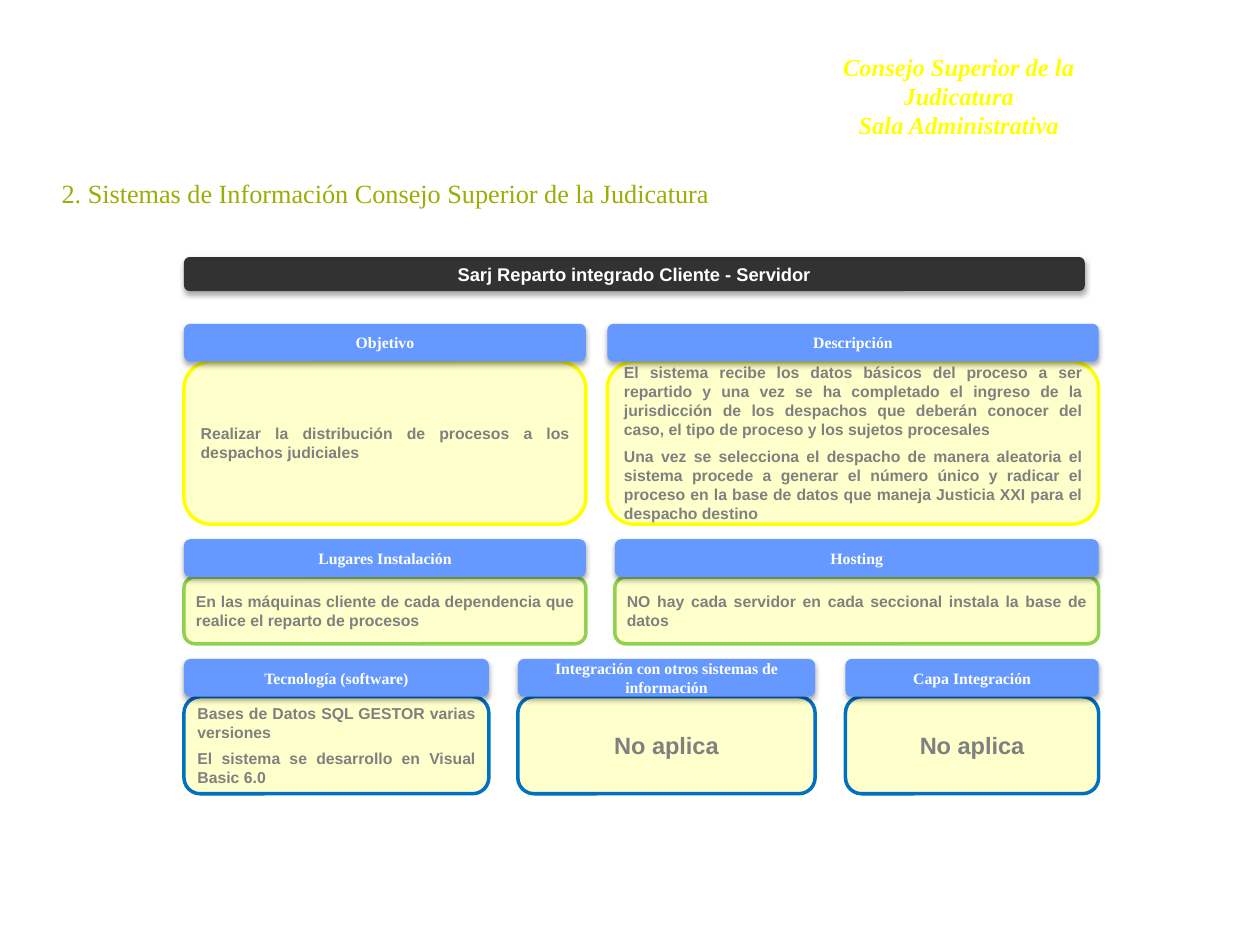
from lxml import etree
from pptx import Presentation
from pptx.dml.color import RGBColor
from pptx.enum.shapes import MSO_SHAPE
from pptx.enum.text import MSO_ANCHOR, PP_ALIGN
from pptx.oxml import parse_xml
from pptx.util import Inches, Pt

ROUNDED = MSO_SHAPE.ROUNDED_RECTANGLE
MIDDLE = MSO_ANCHOR.MIDDLE
CENTER = PP_ALIGN.CENTER
JUSTIFY = PP_ALIGN.JUSTIFY
SERIF, SANS = "Times New Roman", "Arial"
COLORS = {
    "yellow": "FFFF00", "olive": "9AAE04", "dark": "323232", "blue": "6699FF",
    "cream": "FFFFCC", "green": "92D050", "navy": "0070C0",
    "gray": "808080", "white": "FFFFFF",
}
SHADOW = (
    '<a:effectLst xmlns:a="http://schemas.openxmlformats.org/drawingml/2006/main">'
    '<a:outerShdw blurRad="39370" dist="22860" dir="5400000" rotWithShape="0">'
    '<a:srgbClr val="000000"><a:alpha val="35000"/></a:srgbClr>'
    "</a:outerShdw></a:effectLst>"
)

# Grid of the cards, in inches
LEFT, RIGHT = 1.46, 8.72
HEADER_HEIGHT = 0.3
HEADER_TEXT = {"name": SERIF, "size": Pt(9), "bold": True, "color": "white"}
BODY_TEXT = {"name": SANS, "size": Pt(9), "bold": True, "color": "gray"}
LARGE_TEXT = {**BODY_TEXT, "size": Pt(13.5)}

# Each row: top, body height, outline, cards (left, right, heading, body paragraphs)
ROWS = [
    (2.57, 1.29, "yellow", [
        (LEFT, 4.65, "Objetivo",
         ["Realizar la distribución de procesos a los despachos judiciales"]),
        (4.82, RIGHT, "Descripción",
         ["El sistema recibe los datos básicos del proceso a ser repartido y una vez "
          "se ha completado el ingreso de la jurisdicción de los despachos que deberán "
          "conocer del caso, el tipo de proceso y los sujetos procesales",
          "Una vez se selecciona el despacho de manera aleatoria el sistema procede a "
          "generar el número único y radicar el proceso en la base de datos que maneja "
          "Justicia XXI para el despacho destino"]),
    ]),
    (4.28, 0.53, "green", [
        (LEFT, 4.65, "Lugares Instalación",
         ["En las máquinas cliente de cada dependencia que realice el reparto de procesos"]),
        (4.88, RIGHT, "Hosting",
         ["NO hay cada servidor en cada seccional instala la base de datos"]),
    ]),
    (5.23, 0.77, "navy", [
        (LEFT, 3.88, "Tecnología (software)",
         ["Bases de Datos SQL GESTOR varias versiones",
          "El sistema se desarrollo en Visual Basic 6.0"]),
        (4.11, 6.47, "Integración con otros sistemas de información", ["No aplica"]),
        (6.71, RIGHT, "Capa Integración", ["No aplica"]),
    ]),
]


def write(box, lines, style, alignment=CENTER, gap=0, margins=(0.07, 0.04)):
    """Fill a box with paragraphs that share one character style."""
    frame = box.text_frame
    side, edge = map(Inches, margins)
    layout = {"word_wrap": True, "vertical_anchor": MIDDLE, "margin_left": side,
              "margin_right": side, "margin_top": edge, "margin_bottom": edge}
    for name, value in layout.items():
        setattr(frame, name, value)
    for index, line in enumerate(lines):
        para = frame.add_paragraph() if index else frame.paragraphs[0]
        para.alignment = alignment
        if index and gap:
            para.space_before = Pt(gap)
        span = para.add_run()
        span.text = line
        for name, value in style.items():
            if name == "color":
                span.font.color.rgb = RGBColor.from_string(COLORS[value])
            else:
                setattr(span.font, name, value)


def add_panel(left, top, width, height, fill, outline=None):
    """Add a rounded panel: outlined and flat, or borderless with a shadow."""
    panel = slide.shapes.add_shape(
        ROUNDED, Inches(left), Inches(top), Inches(width), Inches(height))
    panel.fill.solid()
    panel.fill.fore_color.rgb = RGBColor.from_string(COLORS[fill])
    if outline:
        panel.shadow.inherit = False
        panel.line.color.rgb = RGBColor.from_string(COLORS[outline])
        panel.line.width = Pt(2)
    else:
        panel.line.fill.background()
        panel.element.spPr.append(parse_xml(SHADOW))
    return panel


deck = Presentation()
deck.slide_width, deck.slide_height = Inches(10), Inches(7.5)
slide = deck.slides.add_slide(deck.slide_layouts[6])

institution = slide.shapes.add_textbox(
    Inches(6.13), Inches(0.36), Inches(2.96), Inches(0.8))
write(institution, ["Consejo Superior de la Judicatura", "Sala Administrativa"],
      {"name": SERIF, "size": Pt(14), "bold": True, "italic": True, "color": "yellow"},
      margins=(0.2, 0.05))

title = slide.shapes.add_textbox(Inches(0), Inches(1.27), Inches(6.12), Inches(0.52))
write(title, ["2. Sistemas de Información Consejo Superior de la Judicatura"],
      {"name": SERIF, "size": Pt(15), "color": "olive"}, margins=(0.1, 0.05))

banner = add_panel(LEFT, 2.04, 7.15, 0.27, "dark")
write(banner, ["Sarj Reparto integrado Cliente - Servidor"],
      {"name": SANS, "size": Pt(10.5), "bold": True, "color": "white"})

for top, body_height, outline, cards in ROWS:
    for left, right, heading, lines in cards:
        width = right - left
        body = add_panel(left, top + HEADER_HEIGHT, width, body_height, "cream", outline)
        if lines == ["No aplica"]:
            write(body, lines, LARGE_TEXT)
        else:
            write(body, lines, BODY_TEXT, JUSTIFY, gap=4.5)
        header = add_panel(left, top, width, HEADER_HEIGHT, "blue")
        write(header, [heading], HEADER_TEXT)

deck.save("out.pptx")
